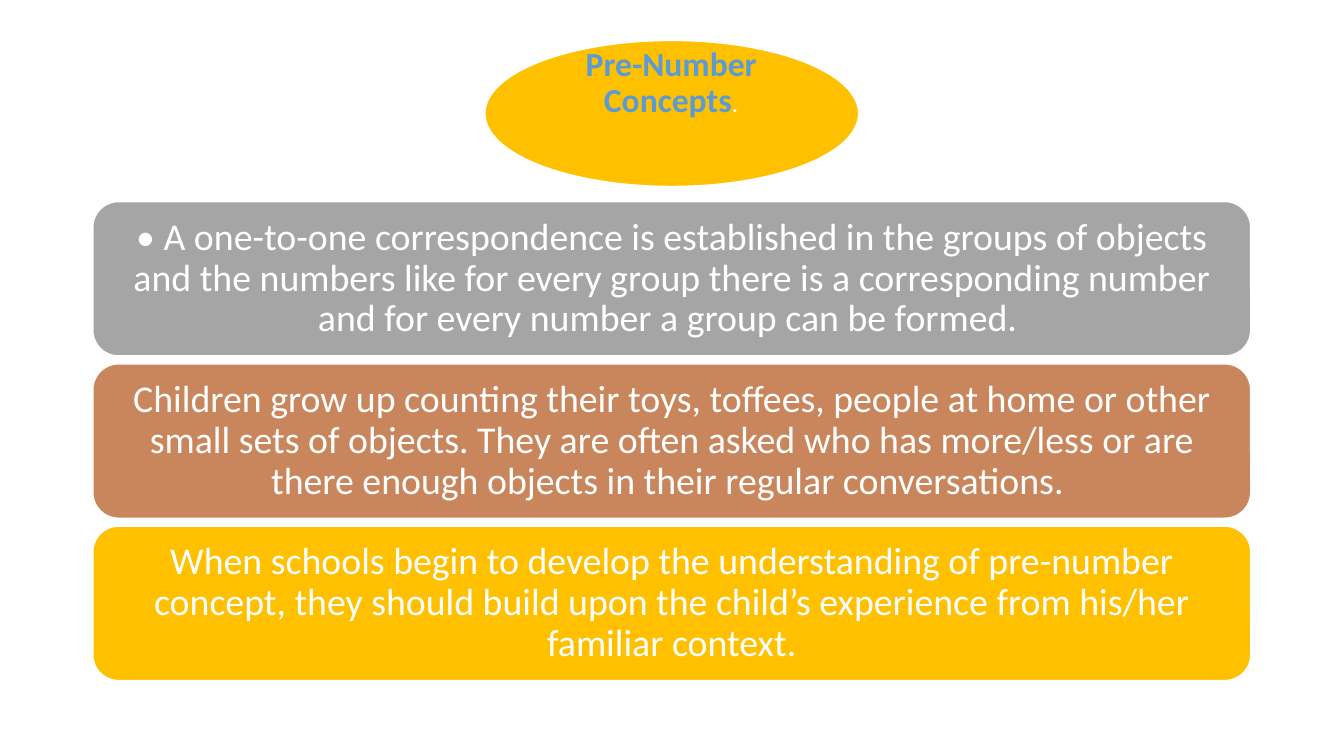
import pptx
import pptx.util
import pptx.dml.color
import pptx.enum.shapes
import pptx.enum.text

Cm, Pt = pptx.util.Cm, pptx.util.Pt
Kind = pptx.enum.shapes.MSO_SHAPE
Anchor = pptx.enum.text.MSO_ANCHOR
Align = pptx.enum.text.PP_ALIGN

theme = {
    "font": "Calibri",
    "white": "FFFFFF", "blue": "5B9BD5", "gold": "FFC000",
    "gray": "A5A5A5", "clay": "C9855C",
    "head": 24, "dot": 19, "body": 27,
}


def paint(shape, fill):
    shape.shadow.inherit = False
    shape.fill.solid()
    shape.fill.fore_color.rgb = pptx.dml.color.RGBColor.from_string(theme[fill])
    shape.line.color.rgb = pptx.dml.color.RGBColor.from_string(theme["white"])
    shape.line.width = Pt(1)


def write(shape, runs, side, edge, anchor):
    frame = shape.text_frame
    form = {"word_wrap": True, "vertical_anchor": anchor,
            "auto_size": pptx.enum.text.MSO_AUTO_SIZE.NONE,
            "margin_left": side, "margin_right": side,
            "margin_top": edge, "margin_bottom": edge}
    for key, value in form.items():
        setattr(frame, key, value)
    para = frame.paragraphs[0]
    para.alignment = Align.CENTER
    para.line_spacing = 0.9
    for text, size, color, bold in runs:
        run = para.add_run()
        run.text = text
        style = {"name": theme["font"], "size": Pt(theme[size]), "bold": bold}
        for key, value in style.items():
            setattr(run.font, key, value)
        run.font.color.rgb = pptx.dml.color.RGBColor.from_string(theme[color])


deck = pptx.Presentation()
deck.slide_width, deck.slide_height = Cm(33.87), Cm(19.05)
slide = deck.slides.add_slide(deck.slide_layouts[5])
shapes = slide.shapes

# Title on its oval
oval = shapes.add_shape(Kind.OVAL, Cm(12.22), Cm(1.02), Cm(9.42), Cm(3.68))
paint(oval, "gold")
title = shapes.title
place = {"left": Cm(13.59), "top": Cm(1.2), "width": Cm(6.65), "height": Cm(2.95)}
for key, value in place.items():
    setattr(title, key, value)
write(title, [("Pre-Number Concepts", "head", "blue", True),
              (".", "dot", "white", False)], Cm(0.08), Cm(0), Anchor.TOP)
shapes.element.append(title.element)  # bring the title in front of the oval

# Three stacked bars
bars = [
    ("gray", "• A one-to-one correspondence is established in the groups of "
             "objects and the numbers like for every group there is a "
             "corresponding number and for every number a group can be formed. "),
    ("clay", "Children grow up counting their toys, toffees, people at home or "
             "other small sets of objects. They are often asked who has "
             "more/less or are there enough objects in their regular "
             "conversations. "),
    ("gold", "When schools begin to develop the understanding of pre-number "
             "concept, they should build upon the child’s experience from "
             "his/her familiar context."),
]
for row, (fill, text) in enumerate(bars):
    bar = shapes.add_shape(Kind.ROUNDED_RECTANGLE, Cm(2.34), Cm(5.08 + 4.09 * row),
                           Cm(29.18), Cm(3.89))
    paint(bar, fill)
    write(bar, [(text, "body", "white", False)], Cm(0.28), Cm(0.15), Anchor.MIDDLE)

deck.save("out.pptx")
